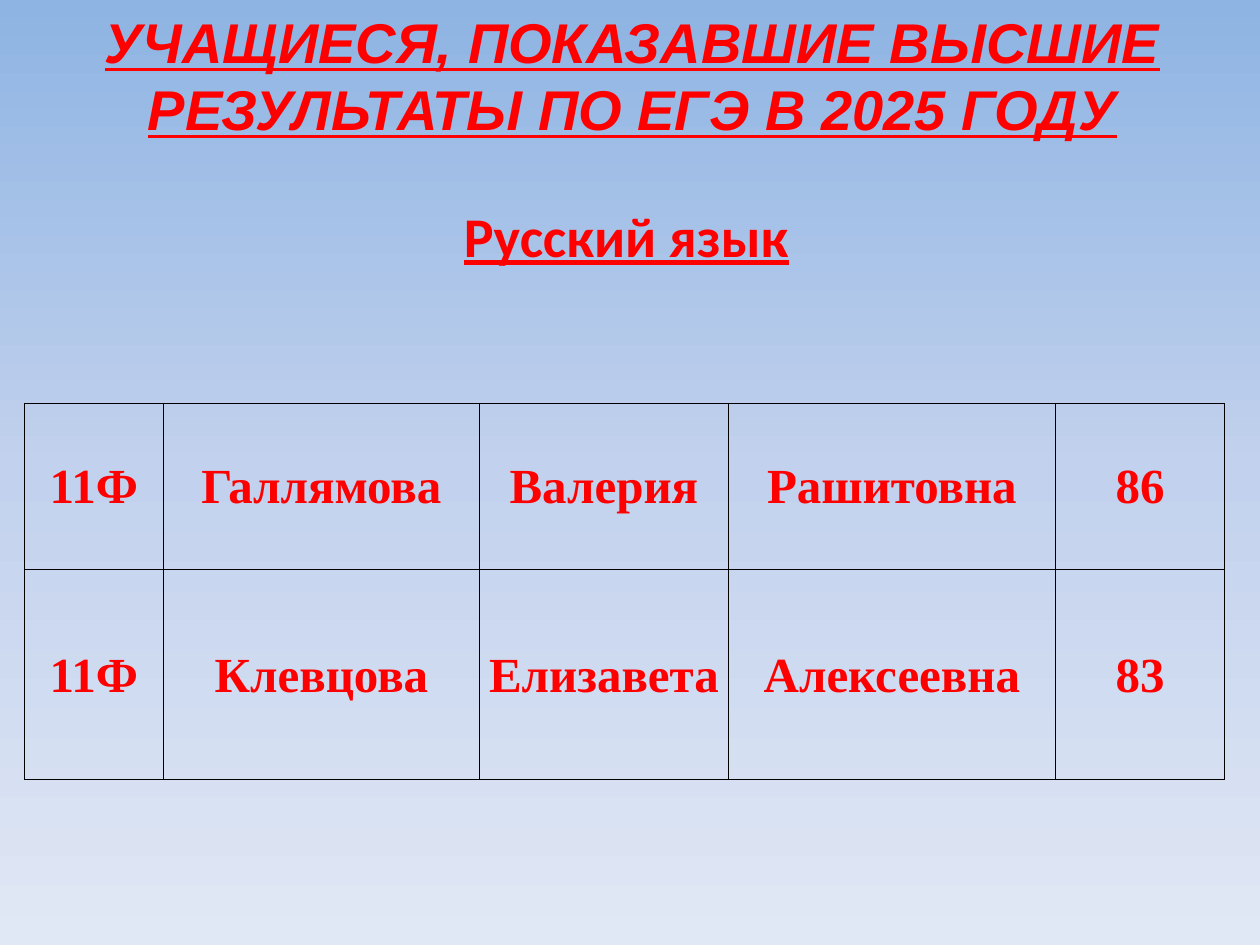
from copy import deepcopy
from dataclasses import dataclass

from pptx import Presentation
from pptx.dml.color import RGBColor
from pptx.enum.text import MSO_ANCHOR, MSO_AUTO_SIZE, PP_ALIGN
from pptx.oxml import parse_xml
from pptx.oxml.ns import nsdecls, qn
from pptx.util import Cm, Pt


@dataclass(frozen=True)
class TextStyle:
    font: str
    size: int
    italic: bool = False
    underline: bool = False


@dataclass(frozen=True)
class Theme:
    text: str = "FF0000"
    border: str = "000000"
    border_pt: float = 0.5
    background: tuple = ((0, "8EB4E3"), (0.5, "C2D1ED"), (1, "E1E8F5"))
    title: TextStyle = TextStyle("Arial", 32, italic=True, underline=True)
    subject: TextStyle = TextStyle("Calibri", 32, underline=True)
    cell: TextStyle = TextStyle("Times New Roman", 28)


@dataclass(frozen=True)
class Student:
    group: str
    surname: str
    name: str
    patronymic: str
    score: str

    def cells(self) -> tuple:
        return self.group, self.surname, self.name, self.patronymic, self.score


THEME = Theme()
TITLE = ("УЧАЩИЕСЯ, ПОКАЗАВШИЕ ВЫСШИЕ", "РЕЗУЛЬТАТЫ ПО ЕГЭ В 2025 ГОДУ")
SUBJECT = "Русский язык"
STUDENTS = (
    Student("11Ф", "Галлямова", "Валерия", "Рашитовна", "86"),
    Student("11Ф", "Клевцова", "Елизавета", "Алексеевна", "83"),
)
COL_WIDTHS = (2.8, 6.38, 5.01, 6.6, 3.41)
ROW_HEIGHTS = (3.35, 4.24)


def add_run(p, text: str, style: TextStyle) -> None:
    r = p.add_run()
    r.text = text
    font = r.font
    font.name, font.size, font.bold = style.font, Pt(style.size), True
    font.italic, font.underline = style.italic, style.underline
    font.color.rgb = RGBColor.from_string(THEME.text)


def paint_background(s) -> None:
    fill = s.background.fill
    fill.gradient()
    fill.gradient_angle = 270
    first = next(s.element.iter(qn("a:gs")))
    first.addnext(deepcopy(first))
    for stop, (position, color) in zip(fill.gradient_stops, THEME.background):
        stop.position = position
        stop.color.rgb = RGBColor.from_string(color)


def add_title(s) -> None:
    sp = s.shapes.title
    sp.left, sp.top, sp.width, sp.height = Cm(0.1), Cm(0), Cm(25.3), Cm(3)
    tf = sp.text_frame
    tf.vertical_anchor = MSO_ANCHOR.MIDDLE
    for i, line in enumerate(TITLE):
        p = tf.add_paragraph() if i else tf.paragraphs[0]
        p.alignment = PP_ALIGN.CENTER
        add_run(p, line, THEME.title)


def add_subject(s) -> None:
    tf = s.shapes.add_textbox(Cm(9.1), Cm(3.93), Cm(7.1), Cm(1.62)).text_frame
    tf.word_wrap = False
    tf.auto_size = MSO_AUTO_SIZE.SHAPE_TO_FIT_TEXT
    add_run(tf.paragraphs[0], SUBJECT, THEME.subject)


def add_borders(cell) -> None:
    tc_pr = cell._tc.get_or_add_tcPr()
    for side in ("lnL", "lnR", "lnT", "lnB"):
        tc_pr.append(parse_xml(
            f'<a:{side} {nsdecls("a")} w="{Pt(THEME.border_pt)}"><a:solidFill>'
            f'<a:srgbClr val="{THEME.border}"/></a:solidFill></a:{side}>'))


def fill_cell(cell, text: str) -> None:
    add_borders(cell)
    cell.fill.background()
    cell.vertical_anchor = MSO_ANCHOR.MIDDLE
    cell.margin_left = cell.margin_right = cell.margin_top = Cm(0.03)
    cell.margin_bottom = Cm(0)
    p = cell.text_frame.paragraphs[0]
    p.alignment = PP_ALIGN.CENTER
    add_run(p, text, THEME.cell)


def add_results(s) -> None:
    table = s.shapes.add_table(
        len(STUDENTS), len(COL_WIDTHS), Cm(0.49), Cm(8.13),
        Cm(sum(COL_WIDTHS)), Cm(sum(ROW_HEIGHTS))).table
    table.first_row = table.horz_banding = False
    for column, width in zip(table.columns, COL_WIDTHS):
        column.width = Cm(width)
    for row, height, student in zip(table.rows, ROW_HEIGHTS, STUDENTS):
        row.height = Cm(height)
        for cell, text in zip(row.cells, student.cells()):
            fill_cell(cell, text)


def main() -> None:
    prs = Presentation()
    prs.slide_width, prs.slide_height = Cm(25.4), Cm(19.05)
    s = prs.slides.add_slide(prs.slide_layouts[5])
    paint_background(s)
    add_title(s)
    add_results(s)
    add_subject(s)
    prs.save("out.pptx")


if __name__ == "__main__":
    main()
